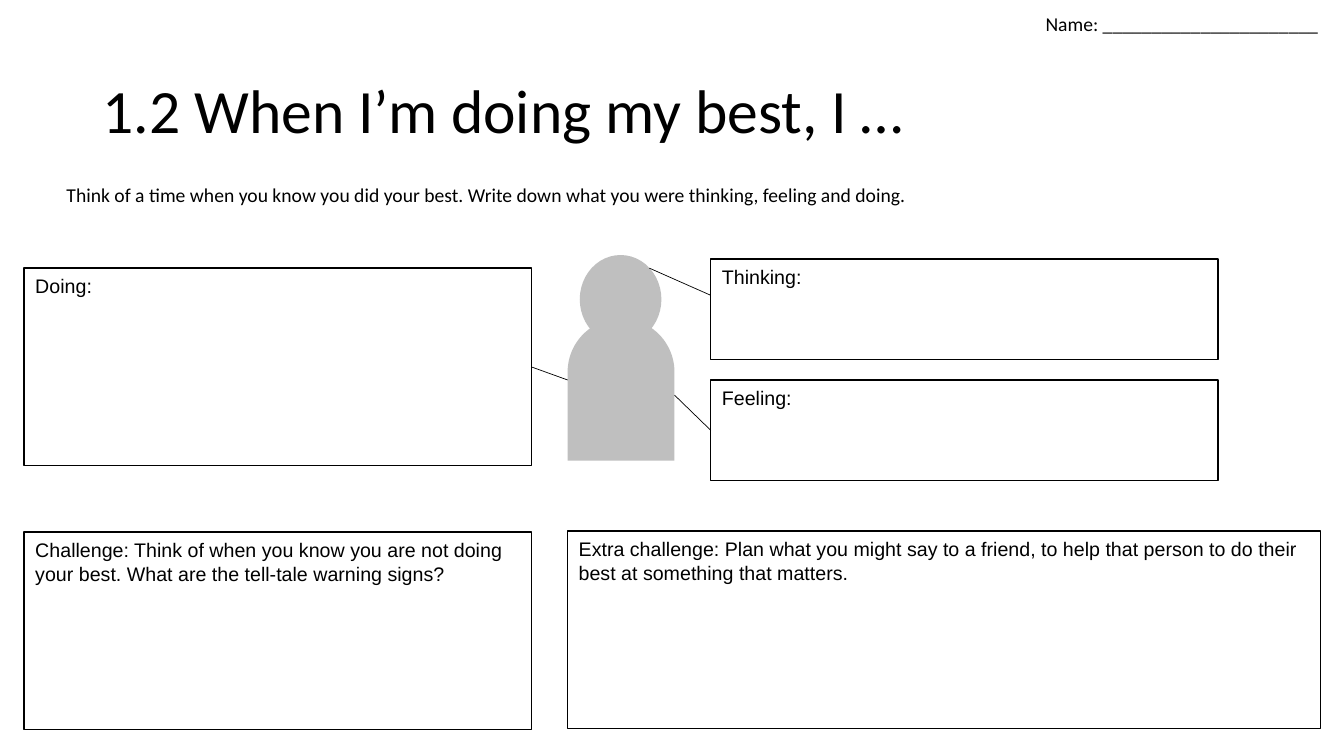
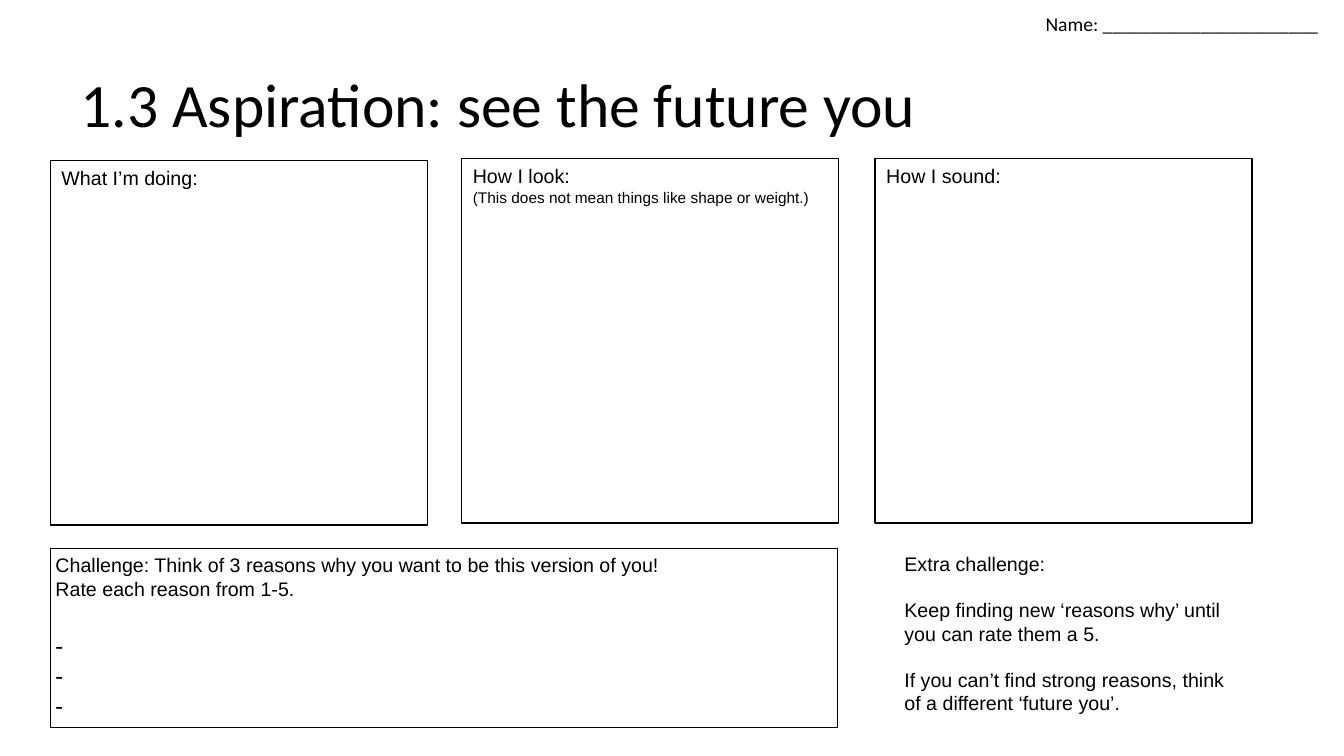
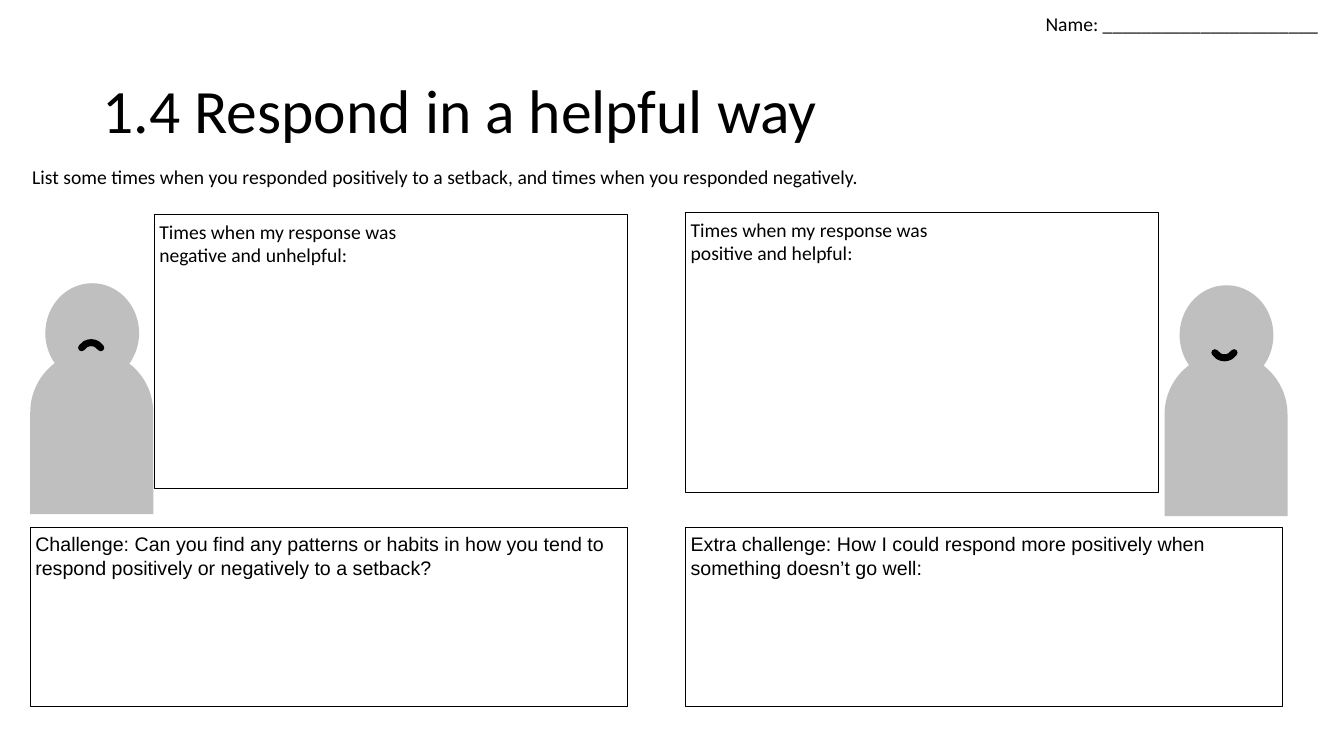
"""Build three goal-setting worksheets with writing boxes and simple figures."""
from dataclasses import dataclass

from lxml import etree
from pptx import Presentation
from pptx import util as u
from pptx.dml.color import RGBColor
from pptx.enum import shapes, text
from pptx.oxml.ns import qn

PX = 9144
COLOURS = {"ink": "000000", "figure": "BFBFBF"}
HEADING_FONT, BODY_FONT = "Calibri", "Arial"
FROWN, SMILE = (214, 326), (34, 146)
TOP, LEFT, BOTTOM, RIGHT = range(4)


@dataclass(frozen=True)
class Line:
    words: str
    size: int = 14
    font: str = ""
    before: int = 0


@dataclass(frozen=True)
class Panel:
    x: int
    y: int
    w: int
    h: int
    lines: tuple[Line, ...]
    font: str = BODY_FONT
    border: float = 0
    inset_x: int = 5
    inset_y: int = 5
    spacing: float = 1.0
    anchor: text.MSO_ANCHOR = text.MSO_ANCHOR.TOP


@dataclass(frozen=True)
class Figure:
    head: tuple[int, int, int, int]
    body: tuple[int, int, int, int]


@dataclass(frozen=True)
class Mouth:
    x: int
    y: int
    angles: tuple[int, int]
    size: int = 23


@dataclass(frozen=True)
class Pointer:
    start: tuple[int, int]
    end: tuple[int, int]


def colour(name: str) -> RGBColor:
    return RGBColor.from_string(COLOURS[name])


def px(*lengths: int) -> list[int]:
    return [u.Emu(length * PX) for length in lengths]


def add_preset(slide, preset, x: int, y: int, w: int, h: int):
    shape = slide.shapes.add_shape(preset, *px(x, y, w, h))
    shape.shadow.inherit = False
    return shape


def add_panel(slide, panel: Panel):
    place = (panel.x, panel.y, panel.w, panel.h)
    if panel.border:
        box = add_preset(slide, shapes.MSO_SHAPE.RECTANGLE, *place)
        box.fill.background()
        box.line.color.rgb = colour("ink")
        box.line.width = u.Pt(panel.border)
    else:
        box = slide.shapes.add_textbox(*px(*place))
    frame = box.text_frame
    frame.word_wrap = True
    frame.vertical_anchor = panel.anchor
    frame.margin_left, frame.margin_right = px(panel.inset_x, panel.inset_x)
    frame.margin_top, frame.margin_bottom = px(panel.inset_y, panel.inset_y)
    frame.text = "\n".join(line.words for line in panel.lines)
    for paragraph, line in zip(frame.paragraphs, panel.lines):
        paragraph.alignment = text.PP_ALIGN.LEFT
        paragraph.line_spacing = panel.spacing
        if line.before:
            paragraph.space_before = u.Pt(line.before)
        for run in paragraph.runs:
            run.font.size = u.Pt(line.size)
            run.font.name = line.font or panel.font
            run.font.color.rgb = colour("ink")
    return box


def add_figure(slide, figure: Figure) -> None:
    head = add_preset(slide, shapes.MSO_SHAPE.OVAL, *figure.head)
    body = add_preset(slide, shapes.MSO_SHAPE.ROUND_2_SAME_RECTANGLE, *figure.body)
    body.adjustments[0] = 0.5
    for part in (head, body):
        part.fill.solid()
        part.fill.fore_color.rgb = colour("figure")
        part.line.fill.background()


def add_mouth(slide, mouth: Mouth) -> None:
    arc = add_preset(slide, shapes.MSO_SHAPE.ARC, mouth.x, mouth.y, mouth.size, mouth.size)
    for index, degrees in enumerate(mouth.angles):
        arc.adjustments[index] = degrees * 0.6
    arc.fill.background()
    arc.line.color.rgb = colour("ink")
    arc.line.width = u.Pt(5)
    arc.line._get_or_add_ln().set("cap", "rnd")


def add_pointer(slide, pointer: Pointer):
    link = slide.shapes.add_connector(
        shapes.MSO_CONNECTOR.STRAIGHT, *px(*pointer.start, *pointer.end))
    link.line.color.rgb = colour("ink")
    link.line.width = u.Pt(0.5)
    etree.SubElement(link._element.spPr, qn("a:effectLst"))
    return link


def add_worksheet(deck, title: str, x: int = 92, y: int = 40):
    slide = deck.slides.add_slide(deck.slide_layouts[6])
    add_panel(slide, Panel(x, y, 1150, 145, (Line(title, 44),), HEADING_FONT,
                           inset_x=10, spacing=0.9, anchor=text.MSO_ANCHOR.MIDDLE))
    add_panel(slide, Panel(1032, 7, 300, 32, (Line("Name: ______________________"),),
                           HEADING_FONT))
    return slide


def add_prompt(slide, x: int, y: int, words: str) -> None:
    add_panel(slide, Panel(x, y, 1250, 32, (Line(words),), HEADING_FONT))


def answer_box(x: int, y: int, w: int, h: int, *lines: Line) -> Panel:
    return Panel(x, y, w, h, lines, border=1, inset_x=11, inset_y=6)


def build_best(deck) -> None:
    slide = add_worksheet(deck, "1.2 When I’m doing my best, I …")
    add_figure(slide, Figure((575, 253, 81, 88), (563, 316, 106, 141)))
    add_prompt(slide, 61, 177, "Think of a time when you know you did your best. "
               "Write down what you were thinking, feeling and doing.")
    doing, _, feeling, _, _ = [add_panel(slide, panel) for panel in (
        answer_box(24, 266, 503, 196, Line("Doing:")),
        answer_box(705, 257, 503, 100, Line("Thinking:")),
        answer_box(705, 377, 503, 100, Line("Feeling:")),
        answer_box(24, 528, 503, 196, Line(
            "Challenge: Think of when you know you are not doing your best. "
            "What are the tell-tale warning signs?")),
        answer_box(563, 527, 747, 196, Line(
            "Extra challenge: Plan what you might say to a friend, to help that "
            "person to do their best at something that matters.")),
    )]
    from_doing, _, from_feeling = [add_pointer(slide, pointer) for pointer in (
        Pointer((527, 364), (563, 377)),
        Pointer((705, 293), (644, 266)),
        Pointer((705, 427), (669, 392)),
    )]
    from_doing.begin_connect(doing, RIGHT)
    from_feeling.begin_connect(feeling, LEFT)


def build_aspiration(deck) -> None:
    slide = add_worksheet(deck, "1.3 Aspiration: see the future you", 70, 34)
    for panel in (
        answer_box(50, 159, 374, 362, Line("What I’m doing:")),
        answer_box(458, 157, 374, 362, Line("How I look:"),
                   Line("(This does not mean things like shape or weight.)", 11)),
        answer_box(868, 157, 374, 362, Line("How I sound:")),
        Panel(50, 544, 781, 178, (
            Line("Challenge: Think of 3 reasons why you want to be this version of you!"),
            Line("Rate each reason from 1-5."),
            *(Line("-", 18, HEADING_FONT, before) for before in (21, 0, 0)),
        ), border=0.75),
        Panel(892, 543, 345, 175, (
            Line("Extra challenge:"),
            Line("Keep finding new ‘reasons why’ until you can rate them a 5.", before=16),
            Line("If you can’t find strong reasons, think of a different ‘future you’.",
                 before=16),
        )),
    ):
        add_panel(slide, panel)


def build_response(deck) -> None:
    slide = add_worksheet(deck, "1.4 Respond in a helpful way")
    add_prompt(slide, 27, 159, "List some times when you responded positively to a setback, "
               "and times when you responded negatively.")
    for x, y, mouth in ((1155, 283, Mouth(1203, 332, SMILE)),
                        (30, 281, Mouth(79, 340, FROWN))):
        add_figure(slide, Figure((x + 15, y, 93, 99), (x, y + 67, 122, 162)))
        add_mouth(slide, mouth)
    for x, y, h, kind in ((153, 213, 272, "negative and unhelpful:"),
                          (680, 211, 278, "positive and helpful:")):
        add_panel(slide, Panel(x, y, 469, h, (Line("Times when my response was"), Line(kind)),
                               HEADING_FONT, border=0.75))
    for x, challenge in (
        (30, "Challenge: Can you find any patterns or habits in how you tend to respond "
             "positively or negatively to a setback?"),
        (680, "Extra challenge: How I could respond more positively when something "
              "doesn’t go well:"),
    ):
        add_panel(slide, Panel(x, 523, 592, 178, (Line(challenge),), border=0.75))


def main() -> None:
    deck = Presentation()
    deck.slide_width, deck.slide_height = px(1333, 750)
    build_best(deck)
    build_aspiration(deck)
    build_response(deck)
    deck.save("out.pptx")


if __name__ == "__main__":
    main()
